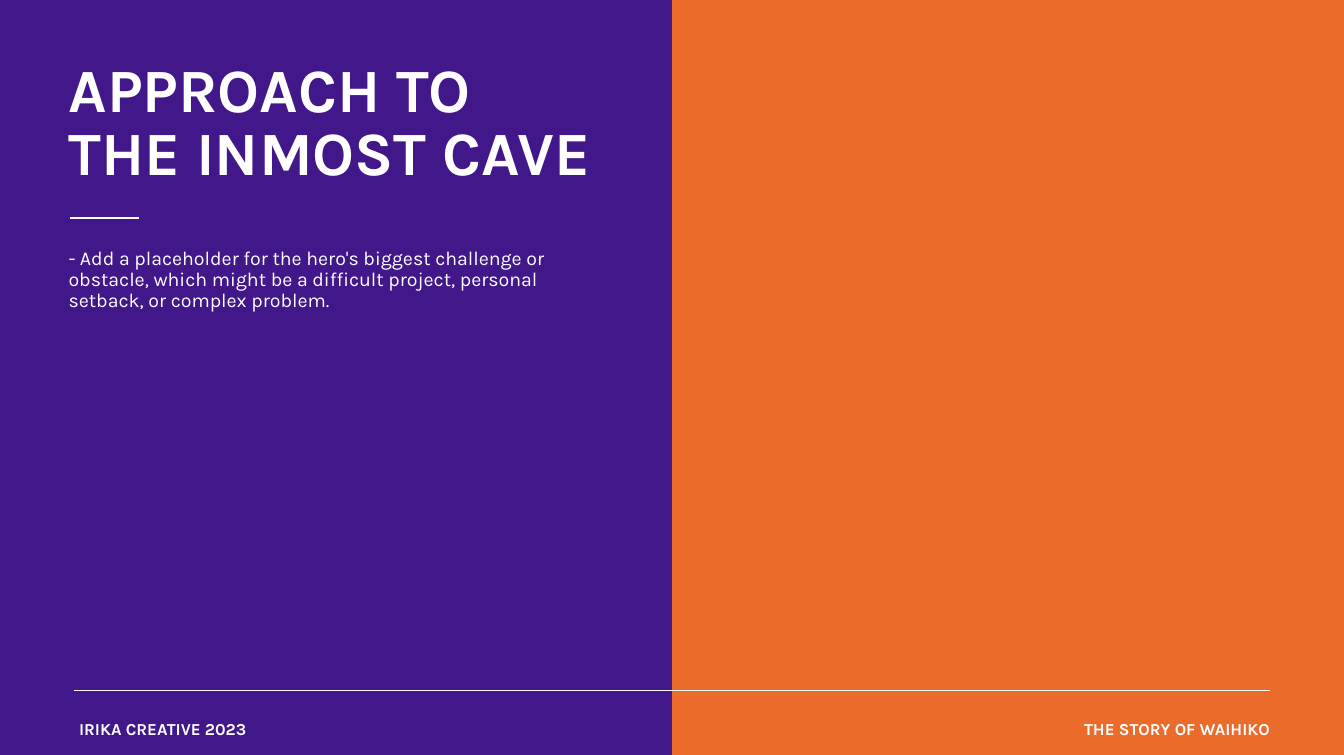
from lxml.etree import SubElement
from pptx import Presentation
from pptx.dml.color import RGBColor
from pptx.enum.shapes import MSO_CONNECTOR, MSO_SHAPE
from pptx.enum.text import MSO_ANCHOR, MSO_AUTO_SIZE, PP_ALIGN
from pptx.oxml.ns import qn
from pptx.util import Cm, Pt

COLORS = {"purple": "42178A", "orange": "EB6B2B", "white": "FFFFFF"}
FONT = "Karla"
WIDTH, HEIGHT = 67.82, 38.1


def write(holder, text, size, spacing, bold=False, align=PP_ALIGN.LEFT):
    """Fill a text holder with one white, top-anchored paragraph."""
    frame = holder.text_frame
    frame.text = text
    frame.word_wrap = True
    frame.auto_size = MSO_AUTO_SIZE.NONE
    frame.vertical_anchor = MSO_ANCHOR.TOP
    frame.margin_left = frame.margin_right = Cm(0.51)
    frame.margin_top = frame.margin_bottom = Cm(0.25)
    paragraph = frame.paragraphs[0]
    paragraph.alignment = align
    paragraph.line_spacing = spacing
    paragraph.space_before = Pt(0)
    for run in paragraph.runs:
        run.font.name = FONT
        run.font.size = Pt(size)
        run.font.bold = bold
        run.font.color.rgb = RGBColor.from_string(COLORS["white"])


def add_rule(shapes, left, top, length, weight):
    """Draw a horizontal white rule."""
    rule = shapes.add_connector(
        MSO_CONNECTOR.STRAIGHT, Cm(left), Cm(top), Cm(left + length), Cm(top))
    rule.line.color.rgb = RGBColor.from_string(COLORS["white"])
    rule.line.width = Pt(weight)
    SubElement(rule.element.spPr, qn("a:effectLst"))


def add_panel(slide, left, top, width, height, color):
    """Draw a plain coloured background panel."""
    panel = slide.shapes.add_shape(
        MSO_SHAPE.RECTANGLE, Cm(left), Cm(top), Cm(width), Cm(height))
    panel.shadow.inherit = False
    panel.fill.solid()
    panel.fill.fore_color.rgb = RGBColor.from_string(COLORS[color])
    panel.line.fill.background()


def add_story(slide, left, top, width, heading, prompt):
    """Place the heading, its short rule and the prompt below it."""
    title = slide.shapes.title
    title.element.getparent().append(title.element)
    title.left, title.top = Cm(left), Cm(top)
    title.width, title.height = Cm(width), Cm(6.63)
    write(title, heading, 88, Pt(90.1), bold=True)
    add_rule(slide.shapes, left + 0.58, top + 8.13, 3.48, 3)
    body = slide.shapes.add_textbox(
        Cm(left), Cm(top + 9.4), Cm(width - 2.85), Cm(4.11))
    write(body, prompt, 28, 0.9)


def add_footer(slide, left, top, width, studio, story):
    """Group the footer rule with a credit at each end."""
    shapes = slide.shapes.add_group_shape().shapes
    studio_width, story_width, height = 9.78, 13.89, 1.63
    credit = shapes.add_textbox(
        Cm(left), Cm(top), Cm(studio_width), Cm(height))
    write(credit, studio, 24, Pt(90.1), bold=True)
    add_rule(shapes, left + 0.25, top + 0.94, width - 0.73, 0.25)
    series = shapes.add_textbox(
        Cm(left + width - story_width), Cm(top), Cm(story_width), Cm(height))
    write(series, story, 24, Pt(90.1), bold=True, align=PP_ALIGN.RIGHT)


def main():
    """Build and save the slide."""
    deck = Presentation()
    deck.slide_width, deck.slide_height = Cm(WIDTH), Cm(HEIGHT)
    slide = deck.slides.add_slide(deck.slide_layouts[5])
    add_panel(slide, 0, 0, WIDTH, HEIGHT, "orange")
    add_panel(slide, 0, 0, WIDTH / 2, HEIGHT, "purple")
    add_story(
        slide, 2.95, 2.87, 30.05, "APPROACH TO\vTHE INMOST CAVE",
        "- Add a placeholder for the hero's biggest challenge or obstacle, "
        "which might be a difficult project, personal setback, "
        "or complex problem.")
    add_footer(slide, 3.48, 33.88, 61.11,
               "IRIKA CREATIVE 2023", "THE STORY OF WAIHIKO")
    deck.save("out.pptx")


if __name__ == "__main__":
    main()
